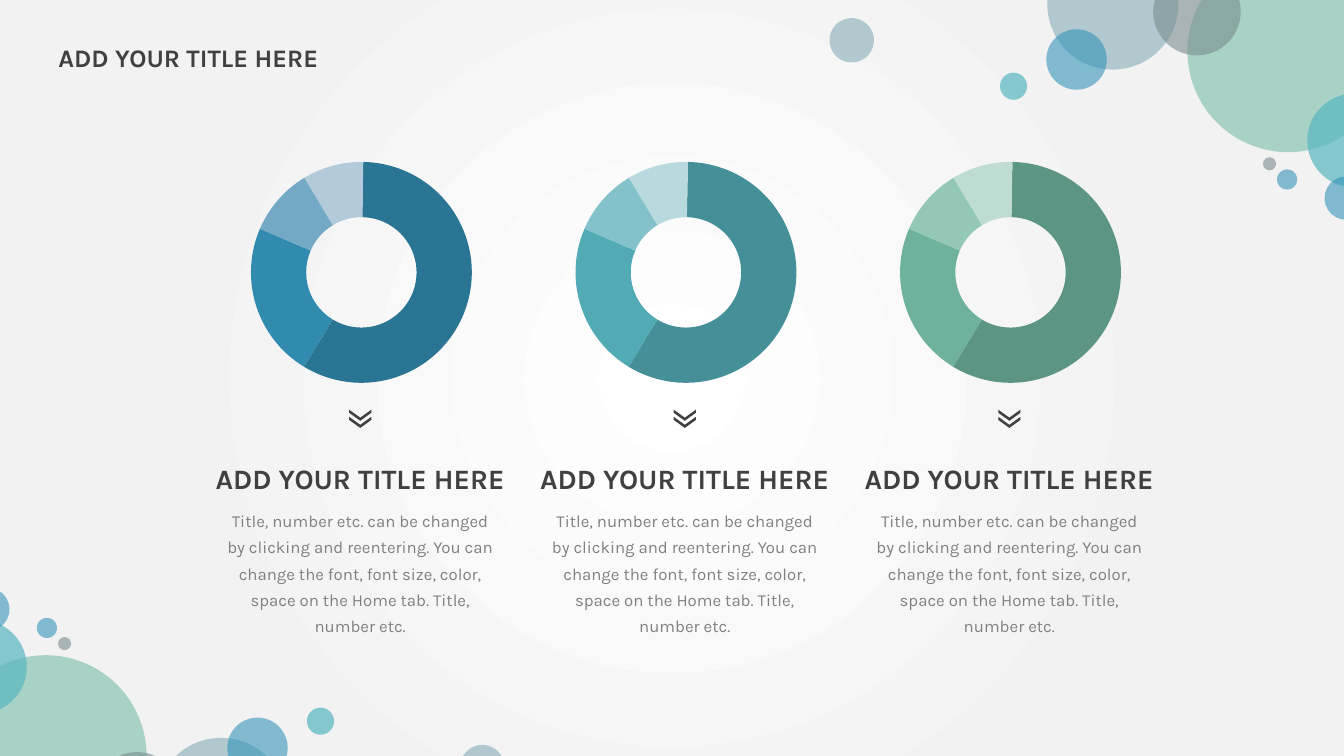
"""Build a slide with three doughnut columns and two clusters of bubbles."""
from typing import NamedTuple

from pptx import Presentation
from pptx.chart.data import CategoryChartData
from pptx.dml.color import RGBColor
from pptx.enum import chart as ch, shapes as sh, text as tx
from pptx.oxml import ns, parse_xml
from pptx.util import Pt

FONT = "Karla"
DARK, GREY = "404040", "808080"
HEADING = "ADD YOUR TITLE HERE"
BODY = ("Title, number etc. can be changed by clicking and reentering. "
        "You can change the font, font size, color, space on the Home tab. "
        "Title, number etc.")
SHARES = (59, 23, 10, 9)
FIRST_CENTER, PITCH = 257.3, 231.84
MIRROR_X, MIRROR_Y = 952.9, 576.7
BACKGROUND = """<p:bg %s><p:bgPr><a:gradFill rotWithShape="1"><a:gsLst>
<a:gs pos="0"><a:srgbClr val="FFFFFF"/></a:gs>
<a:gs pos="67000"><a:srgbClr val="F2F2F2"/></a:gs>
<a:gs pos="100000"><a:srgbClr val="F2F2F2"/></a:gs></a:gsLst>
<a:path path="circle"><a:fillToRect l="50000" t="50000" r="50000" b="50000"/></a:path>
</a:gradFill><a:effectLst/></p:bgPr></p:bg>""" % ns.nsdecls("p", "a")
LAYOUT = """<c:layout %s><c:manualLayout><c:layoutTarget val="inner"/>
<c:xMode val="edge"/><c:yMode val="edge"/><c:x val="0.06"/><c:y val="0.07"/>
<c:w val="0.89"/><c:h val="0.87"/></c:manualLayout></c:layout>""" % ns.nsdecls("c")


class Bubble(NamedTuple):
    x: float
    y: float
    size: float
    color: str
    opacity: int = 60


class Column(NamedTuple):
    colors: tuple[str, ...]


BUBBLES = (
    Bubble(794.9, 2.9, 93.6, "84ACB6"),
    Bubble(920.2, 36.7, 144, "75BDA7"),
    Bubble(855, 8.3, 62.6, "7A8C8E"),
    Bubble(769, 42.5, 43.2, "3494BA"),
    Bubble(967.3, 100.4, 67, "58B6C0", 70),
    Bubble(724, 61.6, 19.4, "58B6C0", 70),
    Bubble(961.6, 141.5, 31, "3494BA"),
    Bubble(919.4, 128.2, 14.4, "3494BA"),
    Bubble(906.8, 117, 9.4, "7A8C8E"),
    Bubble(608.4, 28.8, 31.7, "84ACB6"),
)
COLUMNS = (
    Column(("297593", "318BAE", "74A9C6", "B2CADA")),
    Column(("459098", "52AAB4", "83C2CA", "B8D9DD")),
    Column(("5C9584", "6EB19C", "93C8B7", "BFDCD2")),
)


def paint(fill, color: str) -> None:
    """Fill with a solid hex colour."""
    fill.solid()
    fill.fore_color.rgb = RGBColor.from_string(color)


def add_filled(shapes, kind, x: float, y: float, w: float, h: float,
               color: str, rotation: float):
    """Add a flat shape centred on x, y."""
    sp = shapes.add_shape(kind, Pt(x - w / 2), Pt(y - h / 2), Pt(w), Pt(h))
    sp.rotation = rotation
    sp.shadow.inherit = False
    paint(sp.fill, color)
    sp.line.fill.background()
    return sp


def add_bubble(shapes, b: Bubble, mirrored: bool) -> None:
    """Add a translucent circle, turned half round the slide if mirrored."""
    x, y = (MIRROR_X - b.x, MIRROR_Y - b.y) if mirrored else (b.x, b.y)
    sp = add_filled(shapes, sh.MSO_SHAPE.OVAL, x, y, b.size, b.size, b.color,
                    177.7 if mirrored else 357.7)
    clr = sp.element.spPr.find(ns.qn("a:solidFill"))[0]
    clr.append(parse_xml('<a:alpha %s val="%d"/>' % (ns.nsdecls("a"), b.opacity * 1000)))


def add_text(s, content: str, left: float, top: float, w: float, h: float,
             size: float, color: str, bold: bool, align) -> None:
    """Add a wrapped one-paragraph text box."""
    tf = s.shapes.add_textbox(Pt(left), Pt(top), Pt(w), Pt(h)).text_frame
    tf.word_wrap = True
    p = tf.paragraphs[0]
    p.alignment = align
    p.line_spacing = 1.3
    r = p.add_run()
    r.text = content
    r.font.name = FONT
    r.font.size = Pt(size)
    r.font.bold = bold
    r.font.color.rgb = RGBColor.from_string(color)


def add_doughnut(s, center: float, colors: tuple[str, ...]) -> None:
    """Add a doughnut chart centred horizontally on a column."""
    data = CategoryChartData()
    data.categories = [str(n) for n in range(1, len(SHARES) + 1)]
    data.add_series("Series 1", SHARES)
    w, h = 177.8, 181.4
    chart = s.shapes.add_chart(ch.XL_CHART_TYPE.DOUGHNUT, Pt(center - w / 2),
                               Pt(103), Pt(w), Pt(h), data).chart
    chart.has_legend = False
    chart.has_title = False
    chart.font.name = FONT
    chart.font.size = Pt(10)
    chart.font.color.rgb = RGBColor.from_string("000000")
    plot = chart.plots[0]
    plot.vary_by_categories = True
    for i, color in enumerate(colors):
        fmt = plot.series[0].points[i].format
        paint(fmt.fill, color)
        fmt.line.fill.background()
    area = chart.element.find(".//" + ns.qn("c:plotArea"))
    for old in area.findall(ns.qn("c:layout")):
        area.remove(old)
    area.insert(0, parse_xml(LAYOUT))
    for tag, value in (("c:firstSliceAng", "1"), ("c:holeSize", "43")):
        area.find(".//" + ns.qn(tag)).set("val", value)


def add_column(s, center: float, column: Column) -> None:
    """Add a chart with its text and double chevron."""
    add_doughnut(s, center, column.colors)
    add_text(s, BODY, center - 103, 357.1, 206, 87.1, 12, GREY, False,
             tx.PP_ALIGN.CENTER)
    add_text(s, HEADING, center - 117.7, 319, 235.4, 46.8, 20, DARK, True,
             tx.PP_ALIGN.CENTER)
    arrows = s.shapes.add_group_shape().shapes
    for y in (296.6, 301.7):
        sp = add_filled(arrows, sh.MSO_SHAPE.CHEVRON, center, y, 7.9, 15.8, DARK, 90)
        sp.adjustments[0] = 0.72


def main() -> None:
    """Build and save the slide."""
    prs = Presentation()
    prs.slide_width, prs.slide_height = Pt(960), Pt(540)
    s = prs.slides.add_slide(prs.slide_layouts[6])
    s.element.cSld.insert(0, parse_xml(BACKGROUND))
    for mirrored in (False, True):
        cluster = s.shapes if mirrored else s.shapes.add_group_shape().shapes
        for b in BUBBLES:
            add_bubble(cluster, b, mirrored)
    add_text(s, HEADING, 34.6, 20.2, 267.8, 31.7, 18, DARK, True, tx.PP_ALIGN.LEFT)
    for i, column in enumerate(COLUMNS):
        add_column(s, FIRST_CENTER + i * PITCH, column)
    prs.save("out.pptx")


if __name__ == "__main__":
    main()
